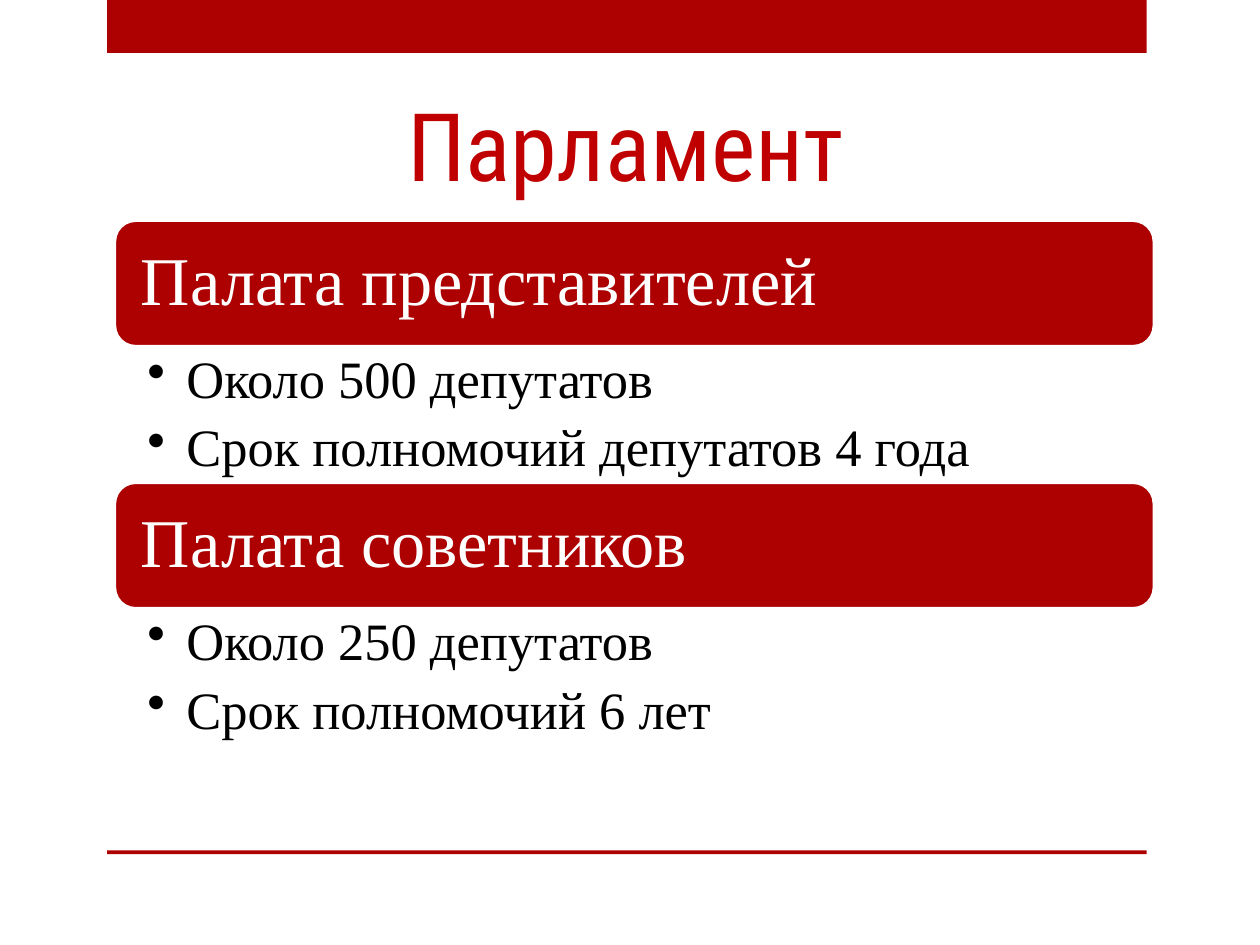
from pptx import Presentation
from pptx.dml.color import RGBColor
from pptx.enum.shapes import MSO_SHAPE
from pptx.enum.text import MSO_ANCHOR, PP_ALIGN
from pptx.util import Inches, Pt
from lxml.etree import SubElement
from pptx.oxml.ns import qn

HUES = {"red": "AD0101", "title": "C00000", "white": "FFFFFF", "black": "000000"}
SERIF = "Times New Roman"

deck = Presentation()
deck.slide_width, deck.slide_height = Inches(10), Inches(7.5)
slide = deck.slides.add_slide(deck.slide_layouts[5])


def block(kind, left, top, width, height):
    shape = slide.shapes.add_shape(
        kind, Inches(left), Inches(top), Inches(width), Inches(height))
    shape.shadow.inherit = False
    shape.fill.solid()
    shape.fill.fore_color.rgb = RGBColor.from_string(HUES["red"])
    shape.line.fill.background()
    return shape


def write(shape, text, size, hue, font=SERIF, align=PP_ALIGN.LEFT,
          anchor=MSO_ANCHOR.MIDDLE, pads=(0.1, 0.05, 0.1, 0.05),
          space=0.9, after=0, dots=False):
    frame = shape.text_frame
    frame.word_wrap = True
    frame.vertical_anchor = anchor
    (frame.margin_left, frame.margin_top,
     frame.margin_right, frame.margin_bottom) = map(Inches, pads)
    frame.text = text
    for para in frame.paragraphs:
        para.alignment = align
        para.line_spacing = space
        para.space_after = Pt(after)
        for run in para.runs:
            run.font.size = Pt(size)
            run.font.name = font
            run.font.color.rgb = RGBColor.from_string(HUES[hue])
        if dots:
            props = para._p.get_or_add_pPr()
            props.set("marL", str(Inches(0.31)))
            props.set("indent", str(Inches(-0.31)))
            SubElement(props, qn("a:buChar")).set("char", "•")


for top, height in [(0, 0.42), (6.75, 0.03)]:
    block(MSO_SHAPE.RECTANGLE, 0.85, top, 8.25, height)

title = slide.shapes.title
title.left, title.top = Inches(0.83), Inches(0.44)
title.width, title.height = Inches(8.27), Inches(1.2)
write(title, "Парламент", 54, "title", font="Roboto Condensed",
      align=PP_ALIGN.CENTER, anchor=MSO_ANCHOR.BOTTOM, space=1.0)

houses = [
    ("Палата представителей",
     ["Около 500 депутатов", "Срок полномочий депутатов 4 года"]),
    ("Палата советников",
     ["Около 250 депутатов", "Срок полномочий 6 лет"]),
]
for i, (name, facts) in enumerate(houses):
    top = 1.75 + i * 2.08
    head = block(MSO_SHAPE.ROUNDED_RECTANGLE, 0.91, top, 8.25, 1)
    head.line.color.rgb = RGBColor.from_string(HUES["white"])
    head.line.width = Pt(1.75)
    write(head, name, 39, "white", pads=(0.16, 0.16, 0.16, 0.16))

    body = slide.shapes.add_textbox(
        Inches(0.91), Inches(top + 1), Inches(8.25), Inches(1.08))
    write(body, "\n".join(facts), 30, "black", anchor=MSO_ANCHOR.TOP,
          pads=(0.26, 0.05, 0.3, 0.05), after=7, dots=True)

deck.save("out.pptx")
